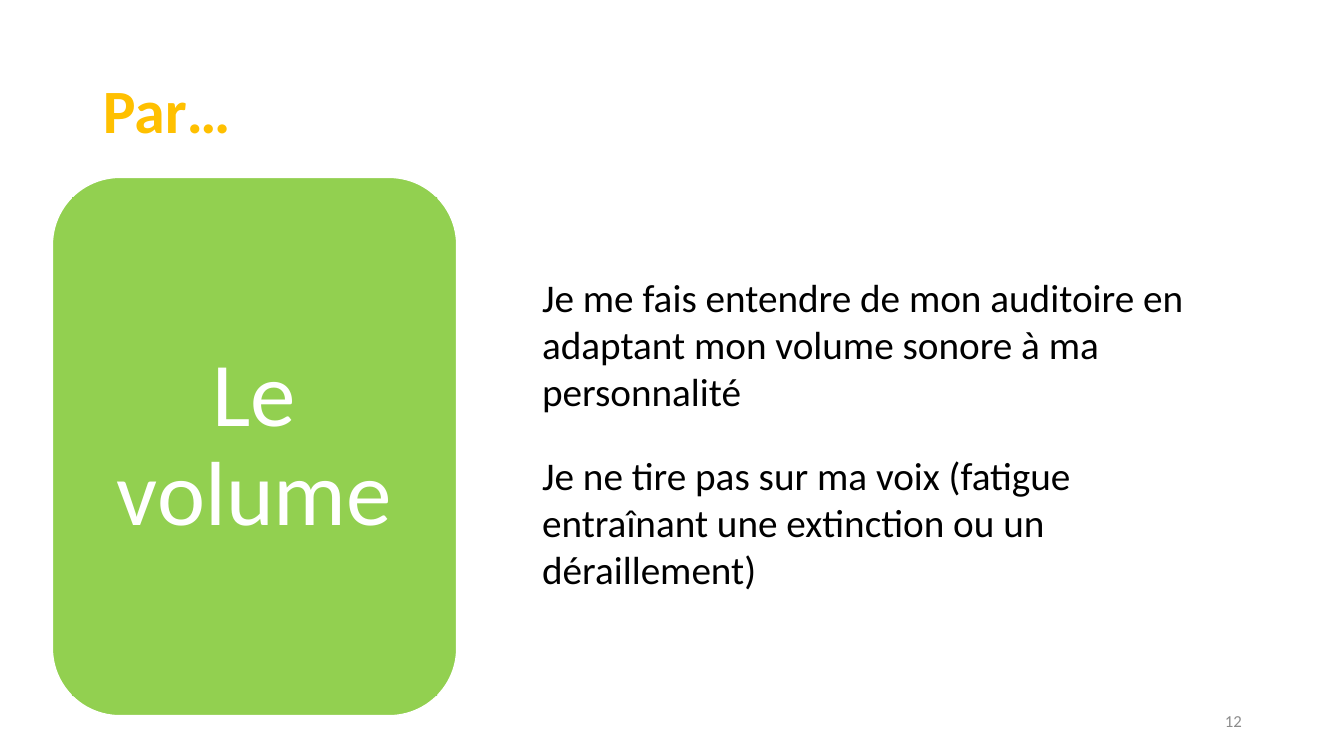
from dataclasses import dataclass
from typing import NamedTuple

from pptx import Presentation
from pptx.dml.color import RGBColor as RGB
from pptx.enum.shapes import MSO_SHAPE as Preset
from pptx.enum.text import MSO_ANCHOR as Anchor, MSO_AUTO_SIZE as AutoSize, PP_ALIGN as Align
from pptx.util import Inches, Pt

WIDTH, HEIGHT = Inches(13.33), Inches(7.5)
COLUMN, ROW = WIDTH / 100, HEIGHT / 100  # grid of 100 by 100


@dataclass(frozen=True)
class Theme:
    font: str = "Calibri"
    heading: RGB = RGB(0xFF, 0xC0, 0x00)
    card: RGB = RGB(0x92, 0xD0, 0x50)
    paper: RGB = RGB(0xFF, 0xFF, 0xFF)
    ink: RGB = RGB(0x00, 0x00, 0x00)
    muted: RGB = RGB(0x8C, 0x8C, 0x8C)
    heading_size: int = 44
    card_size: int = 65
    point_size: int = 28
    number_size: int = 12


THEME = Theme()


class Box(NamedTuple):
    """Left, top, width and height in grid columns and rows."""
    left: float
    top: float
    width: float
    height: float

    def emu(self):
        return [round(share * unit) for share, unit in zip(self, (COLUMN, ROW) * 2)]

    def inset(self, columns, rows):
        return Box(self.left + columns, self.top + rows,
                   self.width - 2 * columns, self.height - 2 * rows)


def write(holder, text, *, size, color, bold=False, align=Align.LEFT,
          anchor=Anchor.TOP, spacing=1.0, margins=(0.1, 0.05)):
    frame = holder.text_frame
    frame.word_wrap = True
    frame.auto_size = AutoSize.NONE
    frame.vertical_anchor = anchor
    frame.margin_left = frame.margin_right = Inches(margins[0])
    frame.margin_top = frame.margin_bottom = Inches(margins[1])
    paragraph = frame.paragraphs[0]
    paragraph.alignment = align
    paragraph.line_spacing = spacing
    run = paragraph.add_run()
    run.text = text
    run.font.name, run.font.size, run.font.bold = THEME.font, Pt(size), bold
    run.font.color.rgb = color


def add_heading(slide, box, text):
    heading = slide.shapes.title
    heading.left, heading.top, heading.width, heading.height = box.emu()
    write(heading, text, size=THEME.heading_size, color=THEME.heading, bold=True,
          anchor=Anchor.MIDDLE, spacing=0.9)


def add_panel(slide, preset, box):
    panel = slide.shapes.add_shape(preset, *box.emu())
    panel.shadow.inherit = False
    panel.fill.solid()
    panel.fill.fore_color.rgb = THEME.card
    return panel


def add_topic_card(slide, box, topic):
    card = add_panel(slide, Preset.ROUNDED_RECTANGLE, box)
    card.line.color.rgb = THEME.paper
    card.line.width = Pt(1)
    label = add_panel(slide, Preset.RECTANGLE, box.inset(1.46, 2.6))
    label.line.fill.background()
    write(label, topic, size=THEME.card_size, color=THEME.paper, align=Align.CENTER,
          anchor=Anchor.MIDDLE, spacing=0.9, margins=(0.27, 0.14))


def add_point(slide, box, text):
    point = slide.shapes.add_textbox(*box.emu())
    write(point, text, size=THEME.point_size, color=THEME.ink)


def add_page_number(slide, box, number):
    page = slide.shapes.add_textbox(*box.emu())
    write(page, number, size=THEME.number_size, color=THEME.muted,
          align=Align.RIGHT, anchor=Anchor.MIDDLE)


def build_topic_slide(deck):
    slide = deck.slides.add_slide(deck.slide_layouts[5])
    # Heading and page number
    add_heading(slide, Box(6.9, 5.33, 86.25, 19.33), "Par…")
    add_page_number(slide, Box(70.65, 92.67, 22.5, 5.33), "12")
    # Topic on the left
    add_topic_card(slide, Box(3.9, 23.47, 30.08, 71.2), "Le volume")
    # Advice on the right
    add_point(slide, Box(39.6, 35.47, 49.75, 24.27),
              "Je me fais entendre de mon auditoire en adaptant mon volume sonore "
              "à ma personnalité")
    add_point(slide, Box(39.6, 59.07, 52.9, 20.13),
              "Je ne tire pas sur ma voix (fatigue entraînant une extinction ou un "
              "déraillement)")


def main():
    deck = Presentation()
    deck.slide_width, deck.slide_height = WIDTH, HEIGHT
    build_topic_slide(deck)
    deck.save("out.pptx")


if __name__ == "__main__":
    main()
